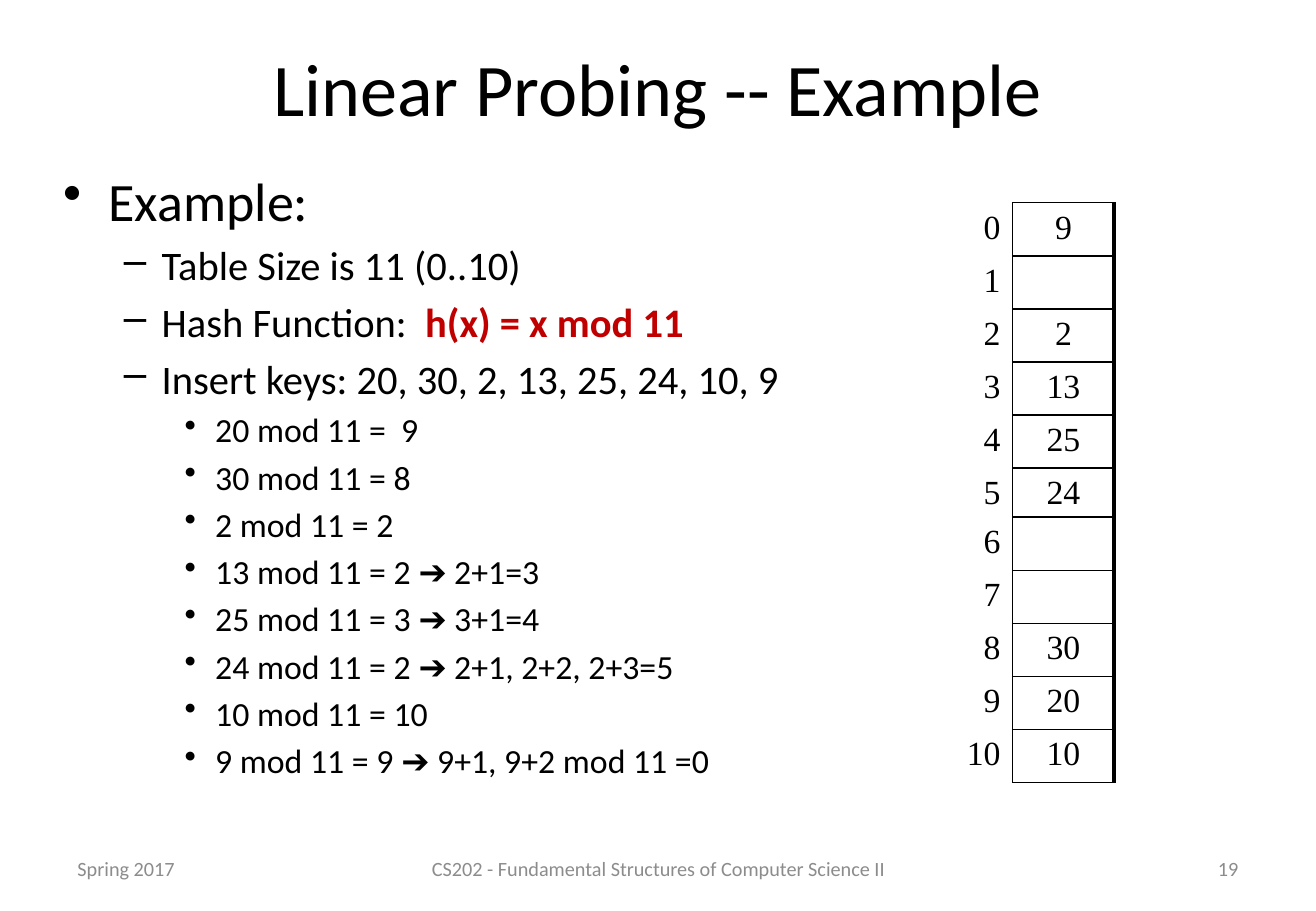
from dataclasses import dataclass

from lxml.etree import SubElement as Sub
from pptx import Presentation
from pptx.dml.color import RGBColor as Rgb
from pptx.enum.text import MSO_ANCHOR as Anchor, PP_ALIGN as Align
from pptx.oxml import parse_xml
from pptx.oxml.ns import nsdecls, qn
from pptx.util import Cm, Pt


@dataclass(frozen=True)
class Theme:
    sans: str = "Calibri"
    serif: str = "Times New Roman"
    black: str = "000000"
    red: str = "C00000"
    gray: str = "8C8C8C"
    title: int = 44
    foot: int = 12
    cell: int = 20
    thin: float = 1
    thick: float = 2.25


@dataclass(frozen=True)
class Label:
    text: str
    left: float
    top: float
    width: float
    height: float
    align: Align
    size: int
    color: str


@dataclass(frozen=True)
class Level:
    size: int
    left: float
    hang: float
    mark: str


@dataclass(frozen=True)
class Line:
    level: int
    text: str
    strong: str = ""


THEME = Theme()

LABELS = [
    Label("Linear Probing -- Example", 1.37, 0.64, 24.77, 2.34, Align.CENTER, THEME.title, THEME.black),
    Label("Spring 2017", 1.37, 17.65, 6.43, 1.02, Align.LEFT, THEME.foot, THEME.gray),
    Label("CS202 - Fundamental Structures of Computer Science II",
          8.69, 17.65, 10.16, 1.02, Align.CENTER, THEME.foot, THEME.gray),
    Label("19", 19.71, 17.65, 6.43, 1.02, Align.RIGHT, THEME.foot, THEME.gray),
]

LEVELS = [
    Level(32, 0.95, 0.95, "•"),
    Level(24, 2.06, 0.79, "–"),
    Level(20, 3.18, 0.64, "•"),
]

LINES = [
    Line(0, "Example:"),
    Line(1, "Table Size is 11 (0..10)"),
    Line(1, "Hash Function:  ", "h(x) = x mod 11"),
    Line(1, "Insert keys: 20, 30, 2, 13, 25, 24, 10, 9"),
    Line(2, "20 mod 11 =  9"),
    Line(2, "30 mod 11 = 8"),
    Line(2, "2 mod 11 = 2"),
    Line(2, "13 mod 11 = 2 ➔ 2+1=3"),
    Line(2, "25 mod 11 = 3 ➔ 3+1=4"),
    Line(2, "24 mod 11 = 2 ➔ 2+1, 2+2, 2+3=5"),
    Line(2, "10 mod 11 = 10"),
    Line(2, "9 mod 11 = 9 ➔ 9+1, 9+2 mod 11 =0"),
]

SLOTS = ["9", "", "2", "13", "25", "24", "", "", "30", "20", "10"]


def style(run, face: str, size: int, color: str, bold: bool = False) -> None:
    run.font.name = face
    run.font.size = Pt(size)
    run.font.bold = bold
    run.font.color.rgb = Rgb.from_string(color)


def add_box(slide, left: float, top: float, width: float, height: float):
    frame = slide.shapes.add_textbox(Cm(left), Cm(top), Cm(width), Cm(height)).text_frame
    frame.word_wrap = True
    return frame


def add_label(slide, label: Label) -> None:
    frame = add_box(slide, label.left, label.top, label.width, label.height)
    frame.vertical_anchor = Anchor.MIDDLE
    frame.text = label.text
    para = frame.paragraphs[0]
    para.alignment = label.align
    style(para.runs[0], THEME.sans, label.size, label.color)


def space(para) -> None:
    gap = Sub(para._p.get_or_add_pPr(), qn("a:spcBef"))
    Sub(gap, qn("a:spcPct"), val="20000")


def add_line(para, line: Line) -> None:
    level = LEVELS[line.level]
    para.text = line.text
    para.level = line.level
    style(para.runs[0], THEME.sans, level.size, THEME.black)
    if line.strong:
        run = para.add_run()
        run.text = line.strong
        style(run, THEME.sans, level.size, THEME.red, True)
    space(para)
    props = para._p.get_or_add_pPr()
    props.set("marL", str(Cm(level.left)))
    props.set("indent", str(-Cm(level.hang)))
    Sub(props, qn("a:buChar"), char=level.mark)


def add_body(slide) -> None:
    frame = add_box(slide, 1.07, 3.38, 17.15, 14.17)
    for i, line in enumerate(LINES):
        add_line(frame.add_paragraph() if i else frame.paragraphs[0], line)


def set_edges(cell, widths: dict[str, float]) -> None:
    props = cell._tc.get_or_add_tcPr()
    for i, side in enumerate("LRTB"):
        width = widths.get(side, 0)
        fill = f'<a:solidFill><a:srgbClr val="{THEME.black}"/></a:solidFill>' if width else "<a:noFill/>"
        edge = parse_xml(f'<a:ln{side} {nsdecls("a")} w="{Pt(width)}">{fill}</a:ln{side}>')
        props.insert(i, edge)


def fill_cell(cell, text: str, align: Align, widths: dict[str, float]) -> None:
    cell.fill.background()
    cell.margin_bottom = Cm(0.05)
    set_edges(cell, widths)
    if text:
        cell.text_frame.text = text
        para = cell.text_frame.paragraphs[0]
        para.alignment = align
        space(para)
        style(para.runs[0], THEME.serif, THEME.cell, THEME.black)


def add_slots(slide) -> None:
    shape = slide.shapes.add_table(len(SLOTS), 2, Cm(19.69), Cm(4.24), Cm(3.6), Cm(12.12))
    table = shape.table
    table.first_row = table.horz_banding = False
    table.columns[0].width = Cm(1.48)
    table.columns[1].width = Cm(2.12)
    thin = THEME.thin
    frame = {"L": thin, "R": THEME.thick, "T": thin, "B": thin}
    for i, key in enumerate(SLOTS):
        table.rows[i].height = Cm(1.02 if i == 5 else 1.11)
        fill_cell(table.cell(i, 0), str(i), Align.RIGHT, {"R": thin})
        fill_cell(table.cell(i, 1), key, Align.CENTER, frame)


def main() -> None:
    deck = Presentation()
    deck.slide_width = Cm(27.51)
    deck.slide_height = Cm(19.05)
    slide = deck.slides.add_slide(deck.slide_layouts[6])
    for label in LABELS:
        add_label(slide, label)
    add_body(slide)
    add_slots(slide)
    deck.save("out.pptx")


if __name__ == "__main__":
    main()
